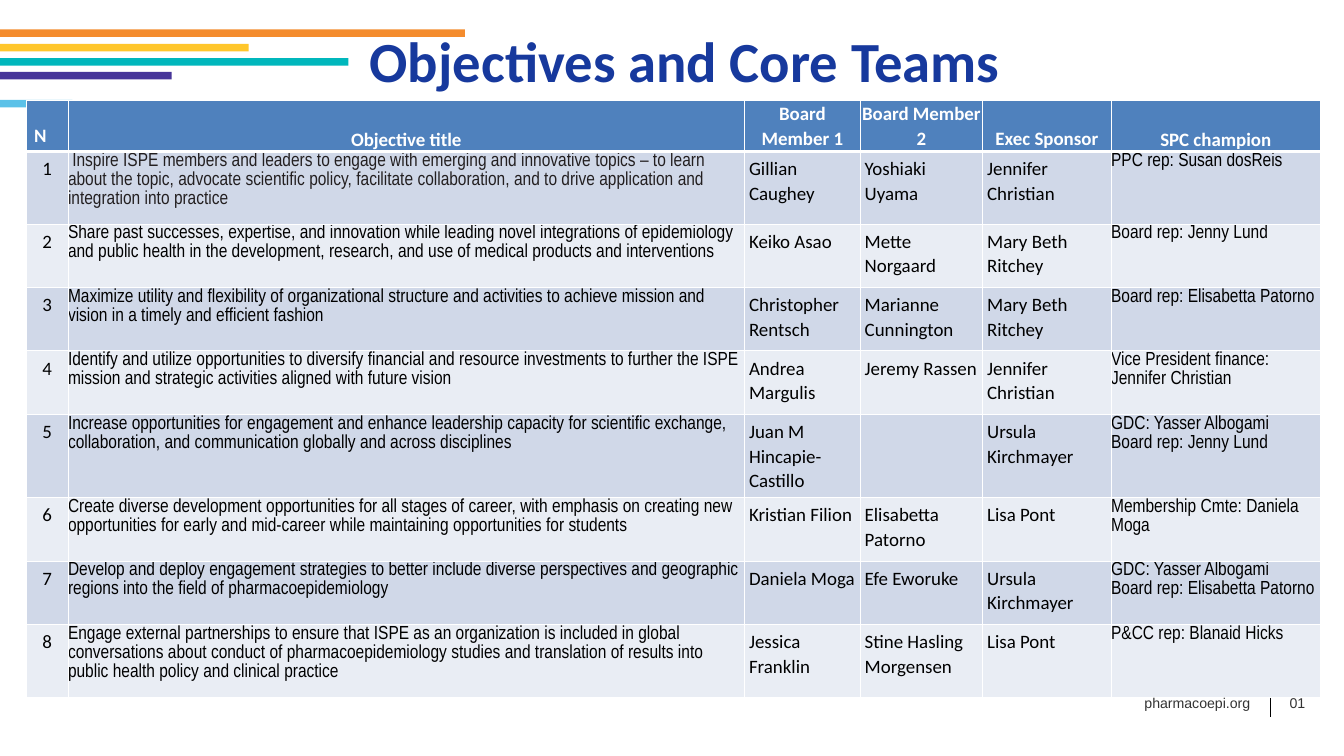
import pptx
import pptx.util
import pptx.dml.color
import pptx.enum.shapes
import pptx.enum.text
import pptx.oxml.ns
from lxml import etree

Inches = pptx.util.Inches
Pt = pptx.util.Pt
PP_ALIGN = pptx.enum.text.PP_ALIGN
ANCHOR = pptx.enum.text.MSO_ANCHOR

STRIPES = [(0.39, 6.15, "F48C2D"), (0.58, 3.29, "FFC62B"), (0.77, 4.61, "00B7BC"),
           (0.95, 2.27, "473599"), (1.32, 0.96, "5BC1E8")]
COLUMN_WIDTHS = [0.55, 8.95, 1.53, 1.62, 1.7, 2.77]
ROW_HEIGHTS = [0.66, 0.96, 0.84, 0.84, 0.84, 1.07, 0.84, 0.84, 0.96]
HEADINGS = ["N", "Objective title", "Board Member 1", "Board Member 2",
            "Exec Sponsor", "SPC champion"]
NARROW_COLUMNS = (1, 5)
OBJECTIVES = [
    ("\N{NO-BREAK SPACE}Inspire ISPE members and leaders to engage with emerging and innovative topics – to learn "
     "about the topic, advocate scientific policy, facilitate collaboration, and to drive "
     "application and integration into practice",
     "Gillian Caughey", "Yoshiaki Uyama", "Jennifer Christian", "PPC rep: Susan dosReis"),
    ("Share past successes, expertise, and innovation while leading novel integrations of "
     "epidemiology and public health in the development, research, and use of medical "
     "products and interventions",
     "Keiko Asao", "Mette Norgaard", "Mary Beth Ritchey", "Board rep: Jenny Lund"),
    ("Maximize utility and flexibility of organizational structure and activities to achieve "
     "mission and vision in a timely and efficient fashion",
     "Christopher Rentsch", "Marianne Cunnington", "Mary Beth Ritchey",
     "Board rep: Elisabetta Patorno"),
    ("Identify and utilize opportunities to diversify financial and resource investments to "
     "further the ISPE mission and strategic activities aligned with future vision",
     "Andrea Margulis", "Jeremy Rassen", "Jennifer Christian",
     "Vice President finance: Jennifer Christian"),
    ("Increase opportunities for engagement and enhance leadership capacity for scientific "
     "exchange, collaboration, and communication globally and across disciplines",
     "Juan M Hincapie-Castillo", "", "Ursula Kirchmayer",
     "GDC: Yasser Albogami\nBoard rep: Jenny Lund"),
    ("Create diverse development opportunities for all stages of career, with emphasis on "
     "creating new opportunities for early and mid-career while maintaining opportunities "
     "for students",
     "Kristian Filion", "Elisabetta Patorno", "Lisa Pont", "Membership Cmte: Daniela Moga"),
    ("Develop and deploy engagement strategies to better include diverse perspectives and "
     "geographic regions into the field of pharmacoepidemiology",
     "Daniela Moga", "Efe Eworuke", "Ursula Kirchmayer",
     "GDC: Yasser Albogami\nBoard rep: Elisabetta Patorno"),
    ("Engage external partnerships to ensure that ISPE as an organization is included in "
     "global conversations about conduct of pharmacoepidemiology studies and translation of "
     "results into public health policy and clinical practice",
     "Jessica Franklin", "Stine Hasling Morgensen", "Lisa Pont", "P&CC rep: Blanaid Hicks"),
]


def rgb(value):
    return pptx.dml.color.RGBColor.from_string(value)


def write(frame, text, size, font, color, bold=False, align=PP_ALIGN.LEFT, spacing=None):
    """Fill a text frame, one paragraph for each line of text."""
    for number, line in enumerate(text.split("\n")):
        paragraph = frame.add_paragraph() if number else frame.paragraphs[0]
        paragraph.alignment = align
        if spacing:
            paragraph.line_spacing = spacing
        run = paragraph.add_run()
        run.text = line
        run.font.size = Pt(size)
        run.font.name = font
        run.font.bold = bold
        run.font.color.rgb = rgb(color)


def add_text(slide, box, text, size, font, color, bold=False):
    frame = slide.shapes.add_textbox(*map(Inches, box)).text_frame
    frame.word_wrap = True
    frame.margin_left = frame.margin_top = frame.margin_right = frame.margin_bottom = 0
    write(frame, text, size, font, color, bold)


def add_stripes(slide, left, height):
    for top, width, color in STRIPES:
        stripe = slide.shapes.add_shape(pptx.enum.shapes.MSO_SHAPE.RECTANGLE,
                                        *map(Inches, (left, top, width, height)))
        stripe.shadow.inherit = False
        stripe.fill.solid()
        stripe.fill.fore_color.rgb = rgb(color)
        stripe.line.fill.background()


def add_footer(slide, left, top):
    add_text(slide, (left, top, 1.45, 0.24), "pharmacoepi.org", 13.5, "Arial", "333333")
    add_text(slide, (left + 1.92, top, 0.7, 0.24), "01", 13.5, "Arial", "333333")
    divider = slide.shapes.add_connector(
        pptx.enum.shapes.MSO_CONNECTOR.STRAIGHT,
        *map(Inches, (left + 1.66, top + 0.05, left + 1.66, top + 0.31)))
    divider.line.color.rgb = rgb("000000")
    divider.line.width = Pt(0.5)
    etree.SubElement(divider._element.spPr, pptx.oxml.ns.qn("a:effectLst"))


def set_borders(cell, color, widths):
    """Draw the left, right, top and bottom edges, with widths in points."""
    properties = cell._tc.get_or_add_tcPr()
    for position, (edge, width) in enumerate(zip(("lnL", "lnR", "lnT", "lnB"), widths)):
        line = etree.Element(pptx.oxml.ns.qn("a:" + edge), w=str(Pt(width)))
        fill = etree.SubElement(line, pptx.oxml.ns.qn("a:solidFill"))
        etree.SubElement(fill, pptx.oxml.ns.qn("a:srgbClr"), val=color)
        properties.insert(position, line)


def style_cell(cell, fill, margin, borders):
    cell.fill.solid()
    cell.fill.fore_color.rgb = rgb(fill)
    set_borders(cell, "FFFFFF", borders)
    if margin is not None:
        cell.margin_left = cell.margin_right = Inches(margin)
        cell.margin_top = cell.margin_bottom = Inches(margin)


def add_objectives_table(slide, left, top):
    table = slide.shapes.add_table(
        len(ROW_HEIGHTS), len(COLUMN_WIDTHS),
        *map(Inches, (left, top, sum(COLUMN_WIDTHS), sum(ROW_HEIGHTS)))).table
    table.first_row = table.horz_banding = False
    for column, width in zip(table.columns, COLUMN_WIDTHS):
        column.width = Inches(width)
    for row, height in zip(table.rows, ROW_HEIGHTS):
        row.height = Inches(height)

    for column, heading in enumerate(HEADINGS):
        cell = table.cell(0, column)
        margin = None if column == 0 else 0 if column in NARROW_COLUMNS else 0.01
        style_cell(cell, "4F81BD", margin, (1, 1, 1, 3))
        cell.vertical_anchor = ANCHOR.BOTTOM
        write(cell.text_frame, heading, 18, "Calibri", "FFFFFF", True,
              PP_ALIGN.CENTER if column else PP_ALIGN.LEFT, 1.07 if column else None)

    for number, objective in enumerate(OBJECTIVES, 1):
        for column, text in enumerate((str(number), *objective)):
            cell = table.cell(number, column)
            narrow = column in NARROW_COLUMNS
            style_cell(cell, "D0D8E8" if number % 2 else "E9EDF4", 0 if narrow else 0.06,
                       (1, 1, 3 if number == 1 else 1, 1))
            if text:
                write(cell.text_frame, text, 18, "Arial Narrow" if narrow else "Calibri",
                      "231F20" if (number, column) == (1, 1) else "000000",
                      align=PP_ALIGN.LEFT if column else PP_ALIGN.CENTER, spacing=1.07)


def main():
    deck = pptx.Presentation()
    deck.slide_width, deck.slide_height = Inches(17.78), Inches(10)
    slide = deck.slides.add_slide(deck.slide_layouts[6])
    add_stripes(slide, 0, 0.1)
    add_objectives_table(slide, 0.35, 1.33)
    add_footer(slide, 15.14, 9.18)
    add_text(slide, (4.89, 0.34, 12.89, 0.91), "Objectives and Core Teams",
             54, "Calibri", "17399D", True)
    deck.save("out.pptx")


if __name__ == "__main__":
    main()
